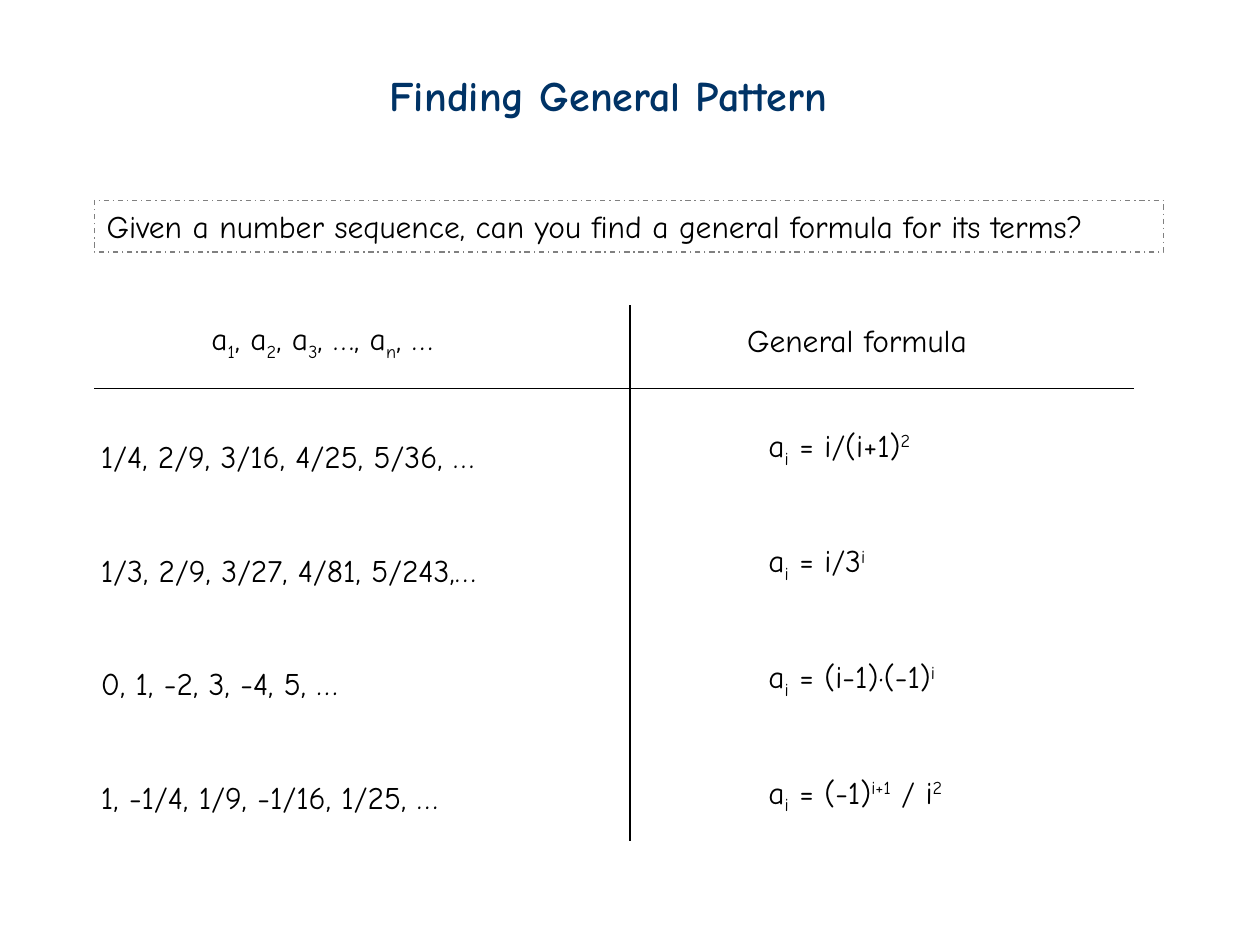
from lxml import etree
from pptx import Presentation
from pptx import util as u
from pptx.dml.color import RGBColor
from pptx.enum import dml, shapes, text
from pptx.oxml.ns import qn

NAVY = RGBColor(0x00, 0x33, 0x66)
BLACK = RGBColor(0x00, 0x00, 0x00)
GREY = RGBColor(0x80, 0x80, 0x80)
FONT = "Comic Neue"
BODY_FORMAT = {"name": FONT, "size": u.Pt(18), "bold": False}
TITLE_FORMAT = {"name": FONT, "size": u.Pt(24), "bold": True}
FRAME_FORMAT = {
    "word_wrap": False,
    "auto_size": text.MSO_AUTO_SIZE.SHAPE_TO_FIT_TEXT,
    "vertical_anchor": text.MSO_ANCHOR.TOP,
}
BASELINES = {"_": "-25000", "^": "30000"}

SEQUENCES = [
    "1/4, 2/9, 3/16, 4/25, 5/36, …",
    "1/3, 2/9, 3/27, 4/81, 5/243,…",
    "0, 1, -2, 3, -4, 5, …",
    "1, -1/4, 1/9, -1/16, 1/25, …",
]
FORMULAS = [
    "a|_i| = i/(i+1)|^2",
    "a|_i| = i/3|^i",
    "a|_i| = (i-1)·(-1)|^i",
    "a|_i| = (-1)|^i+1| / i|^2",
]


def apply(target, values):
    """Set each attribute named in values on the target."""
    for name, value in values.items():
        setattr(target, name, value)


def place(shape, left, top, width, height):
    """Move and size a shape, with lengths in centimetres."""
    apply(shape, {"left": u.Cm(left), "top": u.Cm(top),
                  "width": u.Cm(width), "height": u.Cm(height)})


def write(shape, lines, font=BODY_FORMAT, color=BLACK, gap=0):
    """Write left-aligned lines, where |_ lowers and |^ raises a part."""
    frame = shape.text_frame
    apply(frame, FRAME_FORMAT)
    for index, line in enumerate(lines):
        paragraph = frame.paragraphs[0] if index == 0 else frame.add_paragraph()
        apply(paragraph, {"alignment": text.PP_ALIGN.LEFT,
                          "space_before": u.Pt(gap if index else 0)})
        for part in line.split("|"):
            run = paragraph.add_run()
            run.text = part.lstrip("_^")
            apply(run.font, font)
            run.font.color.rgb = color
            if part[0] in BASELINES:
                run.font._element.set("baseline", BASELINES[part[0]])


def add_label(slide, line, left, top, width):
    """Add one line of text in a box of its own."""
    label = slide.shapes.add_textbox(u.Cm(left), u.Cm(top), u.Cm(width), u.Cm(1.02))
    write(label, [line])


def add_rule(slide, x1, y1, x2, y2):
    """Draw a thin black rule between two points."""
    rule = slide.shapes.add_connector(
        shapes.MSO_CONNECTOR.STRAIGHT, u.Cm(x1), u.Cm(y1), u.Cm(x2), u.Cm(y2))
    rule.line.color.rgb = BLACK
    rule.line.width = u.Pt(0.75)
    etree.SubElement(rule._element.spPr, qn("a:effectLst"))


def build_title(slide, left, top, width, height):
    """Fill the title placeholder."""
    title = slide.shapes.title
    place(title, left, top, width, height)
    write(title, ["Finding General Pattern"], TITLE_FORMAT, NAVY)


def build_question(slide, left, top, width, height):
    """Add the question in its dash-dotted frame."""
    question = slide.shapes.add_shape(
        shapes.MSO_SHAPE.RECTANGLE, u.Cm(left), u.Cm(top), u.Cm(width), u.Cm(height))
    question.shadow.inherit = False
    question.fill.background()
    question.line.color.rgb = GREY
    apply(question.line, {"width": u.Pt(0.75),
                          "dash_style": dml.MSO_LINE.DASH_DOT})
    write(question, ["Given a number sequence, can you find a general formula for its terms?"])


def build_sequences(slide, left, top, width, height):
    """List the sequences, without bullets, in the body placeholder."""
    body = slide.placeholders[1]
    place(body, left, top, width, height)
    write(body, SEQUENCES, gap=43.2)
    for paragraph in body.text_frame.paragraphs:
        properties = paragraph._p.get_or_add_pPr()
        properties.set("marL", "0")
        properties.set("indent", "0")
        etree.SubElement(properties, qn("a:buNone"))


def build_comparison(slide, left, top, width, height):
    """Set sequences and general formulas side by side, divided by rules."""
    middle, header_bottom = left + 10.8, top + 1.68
    add_rule(slide, middle, top, middle, top + height)
    add_rule(slide, left, header_bottom, left + width, header_bottom)
    add_label(slide, "a|_1|, a|_2|, a|_3|, …, a|_n|, …", left + 2.11, top + 0.15, 5.44)
    add_label(slide, "General formula", middle + 2.11, top + 0.2, 5.26)
    build_sequences(slide, left - 0.12, top + 2.54, 9.45, 8.64)
    for row, formula in enumerate(FORMULAS):
        add_label(slide, formula, middle + 2.54, top + 2.31 + 2.33 * row, 4.2)


def main():
    """Build and save the slide."""
    deck = Presentation()
    apply(deck, {"slide_width": u.Cm(25.4), "slide_height": u.Cm(19.05)})
    slide = deck.slides.add_slide(deck.slide_layouts[1])
    build_title(slide, 7.6, 1.27, 10.19, 1.27)
    build_question(slide, 1.9, 4.04, 21.56, 1.04)
    build_comparison(slide, 1.9, 6.15, 20.96, 10.8)
    deck.save("out.pptx")


if __name__ == "__main__":
    main()
